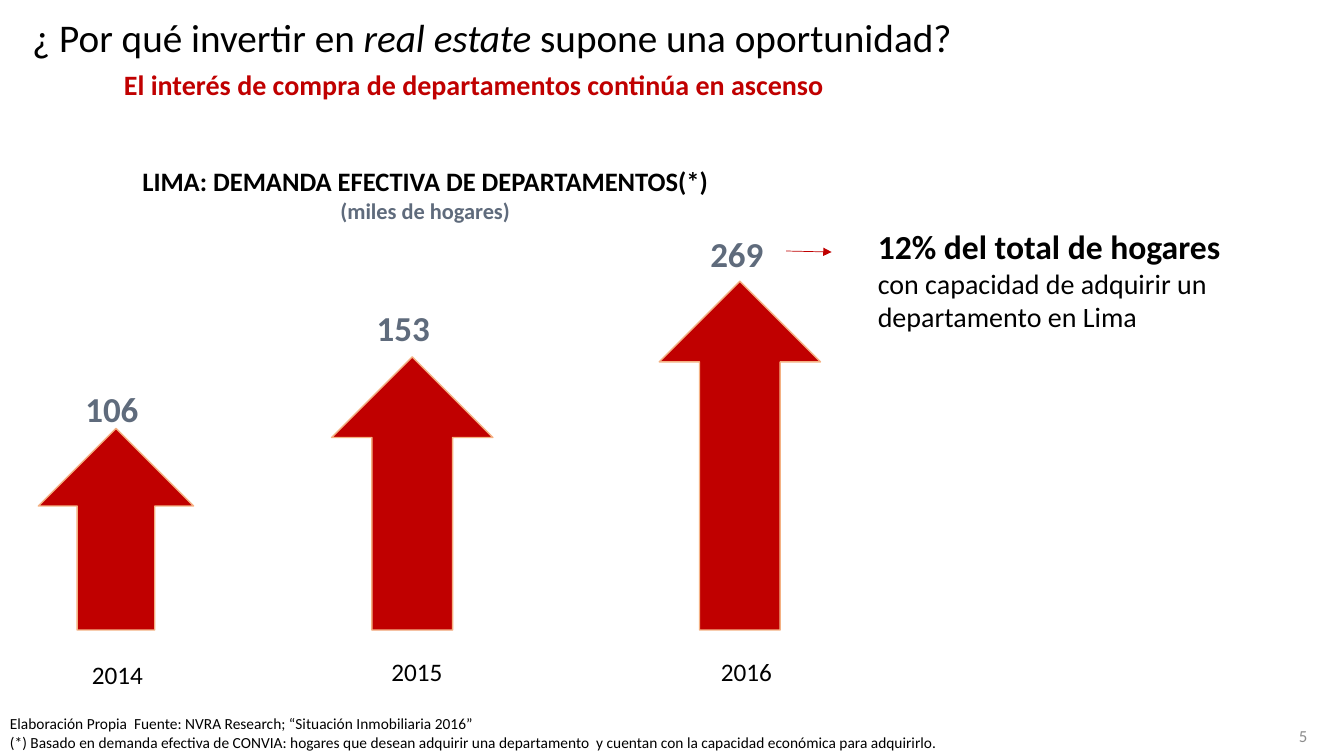
from dataclasses import dataclass

import lxml.etree
import pptx
import pptx.dml.color
import pptx.enum.shapes
import pptx.enum.text
import pptx.oxml.ns
import pptx.util

Pt = pptx.util.Pt
Align = pptx.enum.text.PP_ALIGN
Anchor = pptx.enum.text.MSO_ANCHOR
AutoSize = pptx.enum.text.MSO_AUTO_SIZE

FONT = "Calibri"
BLACK = "000000"
RED = "C00000"
SLATE = "5F6B7C"
GRAY = "8C8C8C"
PEACH = "F4B183"
BASELINE = 450


@dataclass(frozen=True)
class Box:
    left: float
    top: float
    width: float
    height: float


@dataclass(frozen=True)
class DemandArrow:
    year: str
    households: str
    left: float
    top: float
    width: float
    value_left: float
    value_top: float
    year_left: float
    year_top: float


DEMAND_ARROWS = [
    DemandArrow("2014", "106", 27.4, 306, 110.9, 24.5, 272.9, 51.8, 467.3),
    DemandArrow("2015", "153", 236.9, 254.9, 115.2, 232.6, 215.3, 265.7, 465.1),
    DemandArrow("2016", "269", 470.9, 200.9, 115.2, 470.9, 162.7, 501.1, 465.1),
]


def color(value: str) -> pptx.dml.color.RGBColor:
    return pptx.dml.color.RGBColor.from_string(value)


def place(shape, box: Box) -> None:
    shape.left, shape.top = Pt(box.left), Pt(box.top)
    shape.width, shape.height = Pt(box.width), Pt(box.height)


def add_run(paragraph, text: str, *, size: float, fill: str = BLACK,
            bold: bool = False, italic: bool = False) -> None:
    run = paragraph.add_run()
    run.text = text
    run.font.name = FONT
    run.font.size = Pt(size)
    run.font.bold = bold
    run.font.italic = italic
    run.font.color.rgb = color(fill)


def add_text_box(slide, box: Box, align=Align.LEFT, anchor=Anchor.TOP, grow: bool = True):
    shape = slide.shapes.add_textbox(Pt(box.left), Pt(box.top), Pt(box.width), Pt(box.height))
    frame = shape.text_frame
    frame.word_wrap = True
    frame.auto_size = AutoSize.SHAPE_TO_FIT_TEXT if grow else AutoSize.NONE
    frame.vertical_anchor = anchor
    frame.paragraphs[0].alignment = align
    return frame


def add_text(slide, box: Box, text: str, *, align=Align.LEFT, anchor=Anchor.TOP,
             grow: bool = True, **format_options) -> None:
    frame = add_text_box(slide, box, align, anchor, grow)
    add_run(frame.paragraphs[0], text, **format_options)


def add_title(slide) -> None:
    title = slide.shapes.title
    place(title, Box(15.8, -6.5, 928.8, 69.8))
    frame = title.text_frame
    frame.word_wrap = True
    frame.auto_size = AutoSize.NONE
    frame.vertical_anchor = Anchor.MIDDLE
    paragraph = frame.paragraphs[0]
    paragraph.alignment = Align.LEFT
    paragraph.line_spacing = 0.9
    add_run(paragraph, "¿ Por qué invertir en ", size=28)
    add_run(paragraph, "real estate ", size=28, italic=True)
    add_run(paragraph, "supone una oportunidad?", size=28)


def add_demand_arrow(slide, arrow: DemandArrow) -> None:
    shape = slide.shapes.add_shape(
        pptx.enum.shapes.MSO_SHAPE.UP_ARROW,
        Pt(arrow.left), Pt(arrow.top), Pt(arrow.width), Pt(BASELINE - arrow.top))
    shape.shadow.inherit = False
    shape.fill.solid()
    shape.fill.fore_color.rgb = color(RED)
    shape.line.color.rgb = color(PEACH)
    shape.line.width = Pt(1)
    add_text(slide, Box(arrow.value_left, arrow.value_top, 110.9, 37.4), arrow.households,
             align=Align.CENTER, size=25, fill=SLATE, bold=True)
    add_text(slide, Box(arrow.year_left, arrow.year_top, 64.1, 28.8), arrow.year,
             align=Align.CENTER, size=18)


def add_pointer(slide) -> None:
    connector = slide.shapes.add_connector(
        pptx.enum.shapes.MSO_CONNECTOR.STRAIGHT, Pt(561.6), Pt(179.3), Pt(594), Pt(180))
    connector.line.color.rgb = color(RED)
    connector.line.width = Pt(0.5)
    qualified = pptx.oxml.ns.qn
    line = connector.line._get_or_add_ln()
    lxml.etree.SubElement(line, qualified("a:tailEnd"), type="triangle")
    lxml.etree.SubElement(connector._element.spPr, qualified("a:effectLst"))


def main() -> None:
    presentation = pptx.Presentation()
    presentation.slide_width = Pt(960)
    presentation.slide_height = Pt(540)
    slide = presentation.slides.add_slide(presentation.slide_layouts[5])

    add_title(slide)
    add_text(slide, Box(81.4, 44.6, 733, 31.7),
             "El interés de compra de departamentos continúa en ascenso",
             size=20, fill=RED, bold=True)

    heading = add_text_box(slide, Box(-31, 114.5, 669.6, 51.1), Align.CENTER)
    add_run(heading.paragraphs[0], "LIMA: DEMANDA EFECTIVA DE DEPARTAMENTOS(*)",
            size=19, bold=True)
    unit = heading.add_paragraph()
    unit.alignment = Align.CENTER
    add_run(unit, "(miles de hogares)", size=16, fill=SLATE, bold=True)

    for arrow in DEMAND_ARROWS:
        add_demand_arrow(slide, arrow)
    add_pointer(slide)

    callout = add_text_box(slide, Box(619.9, 157.7, 272.9, 85)).paragraphs[0]
    add_run(callout, "12% del total de hogares ", size=24, bold=True)
    add_run(callout, "con capacidad de adquirir un departamento en Lima", size=20)

    notes = add_text_box(slide, Box(0, 506.9, 853.2, 33.8))
    add_run(notes.paragraphs[0],
            "Elaboración Propia  Fuente: NVRA Research; “Situación Inmobiliaria 2016”", size=11)
    add_run(notes.add_paragraph(),
            "(*) Basado en demanda efectiva de CONVIA: hogares que desean adquirir una "
            "departamento  y cuentan con la capacidad económica para adquirirlo.", size=11)

    add_text(slide, Box(717.1, 511.2, 223.9, 28.8), "5", align=Align.RIGHT,
             anchor=Anchor.MIDDLE, grow=False, size=12, fill=GRAY)

    presentation.save("out.pptx")


if __name__ == "__main__":
    main()
